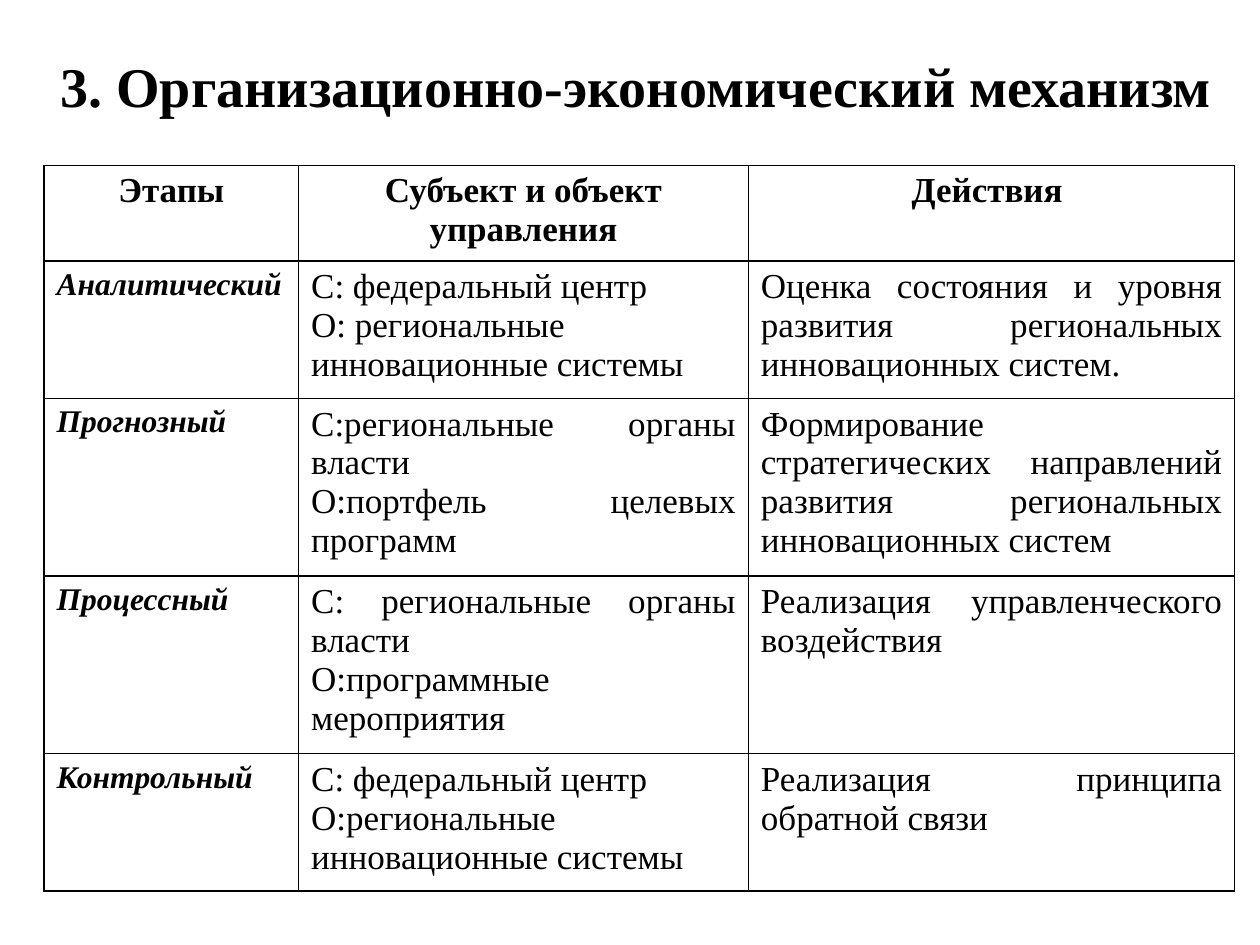
from dataclasses import dataclass
from lxml import etree
from pptx import Presentation, util as u
from pptx.dml.color import RGBColor
from pptx.enum import text
from pptx.oxml.ns import qn


@dataclass(frozen=True)
class Theme:
    font: str = "Times New Roman"
    ink: str = "000000"
    paper: str = "FFFFFF"
    title_size: int = 32
    body_size: int = 20
    stage_size: int = 18
    border: int = 1


class SlideBuilder:
    def __init__(self, deck, theme):
        self.deck = deck
        self.theme = theme
        self.page = deck.slides.add_slide(deck.slide_layouts[5])
        self.page.background.fill.solid()
        self.page.background.fill.fore_color.rgb = RGBColor.from_string(theme.paper)

    def area(self, left, top, width, height):
        wide, high = self.deck.slide_width, self.deck.slide_height
        return [int(share * side) for share, side in
                zip((left, top, width, height), (wide, high, wide, high))]

    def add_lines(self, frame, lines, size, align, bold=False, italic=False):
        for index, line in enumerate(lines):
            para = frame.paragraphs[0] if index == 0 else frame.add_paragraph()
            para.alignment = align
            span = para.add_run()
            span.text = line
            font = span.font
            font.name, font.size = self.theme.font, u.Pt(size)
            font.bold, font.italic = bold, italic
            font.color.rgb = RGBColor.from_string(self.theme.ink)

    def title(self, line, area):
        box = self.page.shapes.title
        box.left, box.top, box.width, box.height = self.area(*area)
        frame = box.text_frame
        frame.word_wrap = True
        frame.auto_size = text.MSO_AUTO_SIZE.NONE
        frame.vertical_anchor = text.MSO_ANCHOR.MIDDLE
        self.add_lines(frame, [line], self.theme.title_size, text.PP_ALIGN.CENTER, bold=True)

    def outline(self, cell):
        props = cell._tc.get_or_add_tcPr()
        for position, side in enumerate(("a:lnL", "a:lnR", "a:lnT", "a:lnB")):
            line = etree.Element(qn(side), w=str(u.Pt(self.theme.border)))
            fill = etree.SubElement(line, qn("a:solidFill"))
            etree.SubElement(fill, qn("a:srgbClr"), val=self.theme.ink)
            props.insert(position, line)

    def table(self, rows, area, widths, heights):
        grid = self.page.shapes.add_table(len(rows), len(widths), *self.area(*area)).table
        for column, width in zip(grid.columns, widths):
            column.width = u.Inches(width)
        for row, height in zip(grid.rows, heights):
            row.height = u.Inches(height)
        for r, row in enumerate(rows):
            for c, lines in enumerate(row):
                cell = grid.cell(r, c)
                cell.fill.background()
                self.outline(cell)
                header, stage = r == 0, r > 0 and c == 0
                self.add_lines(
                    cell.text_frame, lines,
                    self.theme.stage_size if stage else self.theme.body_size,
                    text.PP_ALIGN.CENTER if header else text.PP_ALIGN.JUSTIFY,
                    bold=header or stage, italic=stage)


STAGES = [
    (["Этапы"], ["Субъект и объект управления"], ["Действия "]),
    (["Аналитический"],
     ["С: федеральный центр", "О: региональные ", "инновационные системы"],
     ["Оценка состояния и уровня развития региональных инновационных систем."]),
    (["Прогнозный"],
     ["С:региональные органы власти", "О:портфель целевых программ"],
     ["Формирование стратегических направлений развития региональных инновационных систем"]),
    (["Процессный"],
     ["С: региональные органы власти", "О:программные мероприятия"],
     ["Реализация управленческого воздействия"]),
    (["Контрольный"],
     ["С: федеральный центр", "О:региональные инновационные системы"],
     ["Реализация принципа обратной связи"]),
]


def main():
    deck = Presentation()
    deck.slide_width, deck.slide_height = u.Inches(10), u.Inches(7.5)
    builder = SlideBuilder(deck, Theme())
    builder.title("3. Организационно-экономический механизм", (0.035, 0.04, 0.94, 0.1))
    builder.table(STAGES, (0.035, 0.175, 0.945, 0.77),
                  widths=(2.02, 3.57, 3.86), heights=(0.76, 1.09, 1.41, 1.41, 1.09))
    deck.save("out.pptx")


if __name__ == "__main__":
    main()
